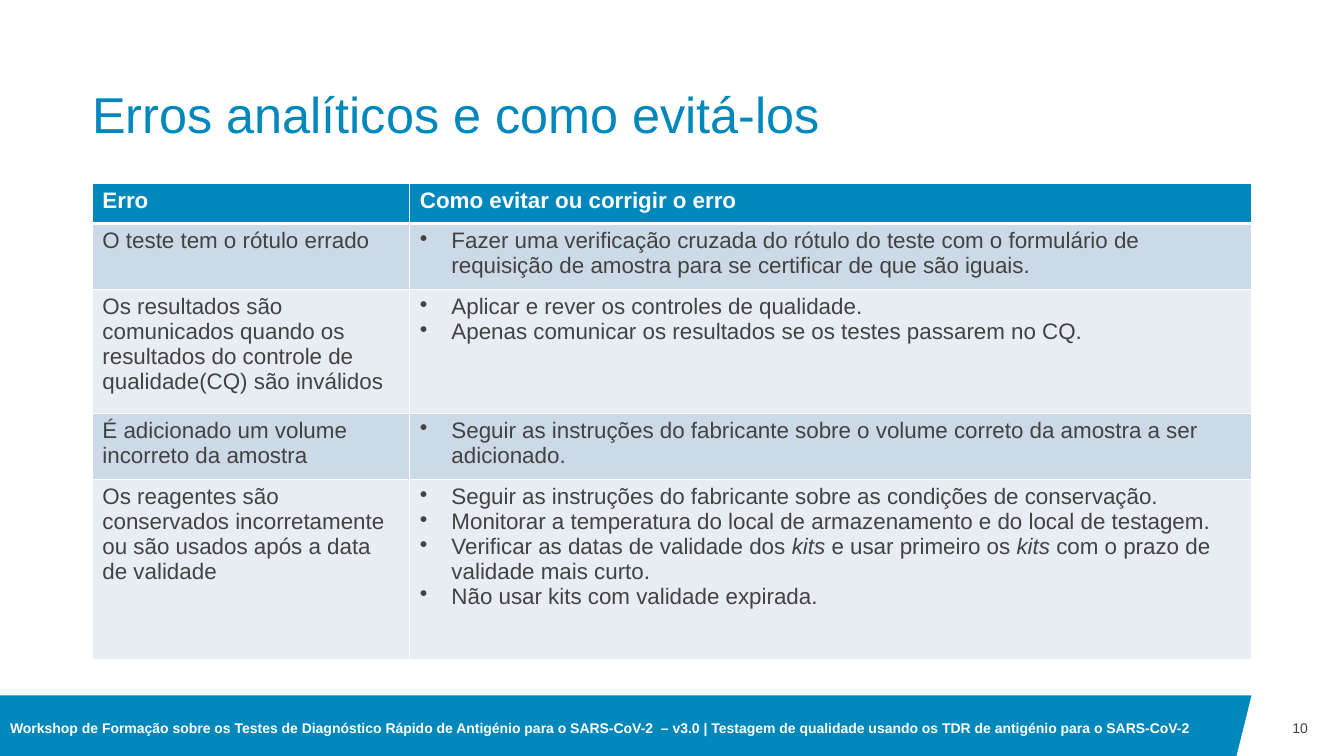
"""Build the slide on analytical errors in antigen testing and how to avoid them."""
from dataclasses import dataclass

import lxml.etree
import pptx
import pptx.dml.color
import pptx.enum.text
import pptx.oxml.ns
import pptx.util

GRID_COLUMNS, GRID_ROWS = 160, 90
UNIT = pptx.util.Inches(7.5) / GRID_ROWS
BLUE = pptx.dml.color.RGBColor(0x00, 0x87, 0xBC)
WHITE = pptx.dml.color.RGBColor(0xFF, 0xFF, 0xFF)
GRAY = pptx.dml.color.RGBColor(0x42, 0x42, 0x42)
BANDS = (
    pptx.dml.color.RGBColor(0xCC, 0xD9, 0xE7),
    pptx.dml.color.RGBColor(0xE7, 0xED, 0xF3),
)
FONT = "Arial"
MARGIN, RIGHT_EDGE = 11, 149
BAR_TOP, BAR_FOOT = 82.8, 147.2
BULLET_INDENT = 3.75
TABLE_TOP, HEADER_HEIGHT, ERROR_WIDTH = 21.8, 4.8, 37.8
HEADERS = ("Erro", "Como evitar ou corrigir o erro")


@dataclass(frozen=True)
class Area:
    """A rectangle in grid columns and rows."""

    column: float
    row: float
    columns: float
    rows: float


@dataclass(frozen=True)
class ErrorRow:
    """An error and its remedies; asterisks enclose italic words."""

    height: float
    error: str
    remedies: tuple[str, ...]


ERROR_ROWS = (
    ErrorRow(7.9, "O teste tem o rótulo errado", (
        "Fazer uma verificação cruzada do rótulo do teste com o formulário de "
        "requisição de amostra para se certificar de que são iguais.",
    )),
    ErrorRow(14.7, "Os resultados são comunicados quando os resultados do controle de "
             "qualidade(CQ) são inválidos", (
        "Aplicar e rever os controles de qualidade.",
        "Apenas comunicar os resultados se os testes passarem no CQ.",
    )),
    ErrorRow(7.9, "É adicionado um volume incorreto da amostra", (
        "Seguir as instruções do fabricante sobre o volume correto da amostra a ser adicionado.",
    )),
    ErrorRow(21.4, "Os reagentes são conservados incorretamente ou são usados após a "
             "data de validade", (
        "Seguir as instruções do fabricante sobre as condições de conservação.",
        "Monitorar a temperatura do local de armazenamento e do local de testagem.",
        "Verificar as datas de validade dos *kits* e usar primeiro os *kits* "
        "com o prazo de validade mais curto.",
        "Não usar kits com validade expirada.",
    )),
)


def grid(cells: float) -> int:
    """Convert grid cells to a slide length."""
    return round(cells * UNIT)


def add_bullet(para) -> None:
    """Give a paragraph a hanging bullet."""
    properties = para._p.get_or_add_pPr()
    properties.set("marL", str(grid(BULLET_INDENT)))
    properties.set("indent", str(-grid(BULLET_INDENT)))
    bullet = lxml.etree.SubElement(properties, pptx.oxml.ns.qn("a:buChar"))
    bullet.set("char", "•")


def write_text(frame, *lines: str, size: float = 16,
               color: pptx.dml.color.RGBColor = GRAY, bold: bool = False,
               bulleted: bool = False, align=pptx.enum.text.PP_ALIGN.LEFT,
               spacing: float | None = None) -> None:
    """Write one formatted paragraph per line."""
    frame.word_wrap = True
    for index, line in enumerate(lines):
        para = frame.add_paragraph() if index else frame.paragraphs[0]
        para.alignment = align
        if spacing:
            para.line_spacing = spacing
        if bulleted:
            add_bullet(para)
        for part, words in enumerate(line.split("*")):
            span = para.add_run()
            span.text = words
            span.font.name = FONT
            span.font.size = pptx.util.Pt(size)
            span.font.bold = bold
            span.font.italic = part % 2 == 1
            span.font.color.rgb = color


def add_label(page, area: Area, text: str,
              anchor=pptx.enum.text.MSO_ANCHOR.MIDDLE, **text_format) -> None:
    """Add a text box without insets."""
    box = page.shapes.add_textbox(
        *map(grid, (area.column, area.row, area.columns, area.rows)))
    frame = box.text_frame
    frame.margin_left = frame.margin_right = frame.margin_top = frame.margin_bottom = 0
    frame.vertical_anchor = anchor
    write_text(frame, text, **text_format)


def add_footer_bar(page) -> None:
    """Draw the footer bar with its slanted right end."""
    outline = page.shapes.build_freeform(0, grid(BAR_TOP), scale=1.0)
    corners = ((RIGHT_EDGE, BAR_TOP), (BAR_FOOT, GRID_ROWS), (0, GRID_ROWS))
    outline.add_line_segments([(grid(x), grid(y)) for x, y in corners], close=True)
    bar = outline.convert_to_shape()
    bar.shadow.inherit = False
    bar.fill.solid()
    bar.fill.fore_color.rgb = BLUE
    bar.line.fill.background()


def style_cell(cell, fill: pptx.dml.color.RGBColor, top: float = 1, bottom: float = 1) -> None:
    """Set a cell's white borders, in points, and its fill."""
    properties = cell._tc.get_or_add_tcPr()
    for side, width in (("L", 1), ("R", 1), ("T", top), ("B", bottom)):
        border = lxml.etree.SubElement(properties, pptx.oxml.ns.qn(f"a:ln{side}"))
        border.set("w", str(pptx.util.Pt(width)))
        paint = lxml.etree.SubElement(border, pptx.oxml.ns.qn("a:solidFill"))
        lxml.etree.SubElement(paint, pptx.oxml.ns.qn("a:srgbClr")).set("val", str(WHITE))
    cell.fill.solid()
    cell.fill.fore_color.rgb = fill


def add_error_table(page) -> None:
    """Add the table of errors and remedies."""
    heights = [HEADER_HEIGHT, *(row.height for row in ERROR_ROWS)]
    widths = (ERROR_WIDTH, RIGHT_EDGE - MARGIN - ERROR_WIDTH)
    table = page.shapes.add_table(
        len(heights), len(widths),
        *map(grid, (MARGIN, TABLE_TOP, sum(widths), sum(heights)))).table
    for column, width in zip(table.columns, widths):
        column.width = grid(width)
    for row, height in zip(table.rows, heights):
        row.height = grid(height)
    for index, header in enumerate(HEADERS):
        cell = table.cell(0, index)
        style_cell(cell, BLUE, bottom=3)
        write_text(cell.text_frame, header, color=WHITE, bold=True)
    for index, row in enumerate(ERROR_ROWS):
        error, remedy = table.cell(index + 1, 0), table.cell(index + 1, 1)
        for cell in (error, remedy):
            style_cell(cell, BANDS[index % 2], top=1 if index else 3)
        write_text(error.text_frame, row.error)
        write_text(remedy.text_frame, *row.remedies, bulleted=True)


def main() -> None:
    """Build and save the deck."""
    deck = pptx.Presentation()
    deck.slide_width, deck.slide_height = grid(GRID_COLUMNS), grid(GRID_ROWS)
    page = deck.slides.add_slide(deck.slide_layouts[6])
    add_footer_bar(page)
    add_label(page, Area(MARGIN, 4.8, RIGHT_EDGE - MARGIN, 12.4),
              "Erros analíticos e como evitá-los", size=36, color=BLUE, spacing=0.9,
              anchor=pptx.enum.text.MSO_ANCHOR.BOTTOM)
    add_label(page, Area(RIGHT_EDGE, BAR_TOP, 6.7, 7.6), "10", size=10,
              align=pptx.enum.text.PP_ALIGN.RIGHT)
    add_error_table(page)
    add_label(page, Area(1.2, 83.4, 142.6, 6.6),
              "Workshop de Formação sobre os Testes de Diagnóstico Rápido de Antigénio "
              "para o SARS-CoV-2  – v3.0 | Testagem de qualidade usando os TDR de "
              "antigénio para o SARS-CoV-2", size=10, color=WHITE, bold=True)
    deck.save("out.pptx")


if __name__ == "__main__":
    main()
